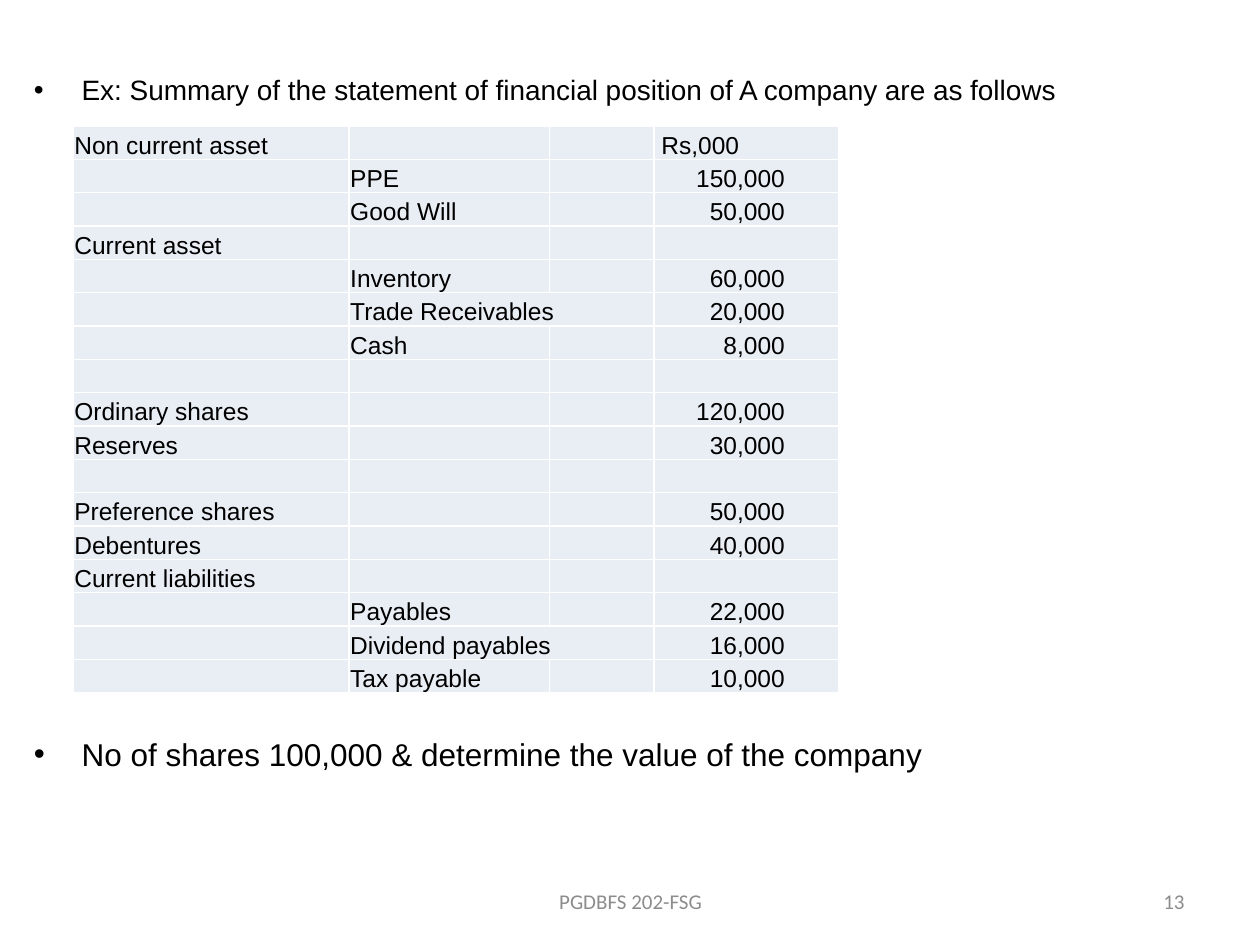
from lxml import etree
from pptx import Presentation
from pptx.dml.color import RGBColor
from pptx.enum.text import MSO_ANCHOR, PP_ALIGN
from pptx.oxml.ns import qn
from pptx.util import Inches, Pt

LEFT, CENTER, RIGHT = PP_ALIGN.LEFT, PP_ALIGN.CENTER, PP_ALIGN.RIGHT
TOP, MIDDLE, BOTTOM = MSO_ANCHOR.TOP, MSO_ANCHOR.MIDDLE, MSO_ANCHOR.BOTTOM

BLACK, GREY, WHITE, PALE_BLUE = "000000", "8C8C8C", "FFFFFF", "E9EDF4"
BODY_FORMAT = {"name": "Arial", "size": Pt(14)}
FOOTER_FORMAT = {"name": "Calibri", "size": Pt(12)}

COLUMN_WIDTHS = (2.19, 1.59, 0.83, 1.47)
ROW_HEIGHT = 4.5 / 17
POSITION_ROWS = (
    ("Non current asset", "", "Rs,000"),
    ("", "PPE", "150,000"),
    ("", "Good Will", "50,000"),
    ("Current asset", "", ""),
    ("", "Inventory", "60,000"),
    ("", "Trade Receivables", "20,000"),
    ("", "Cash", "8,000"),
    ("", "", ""),
    ("Ordinary shares", "", "120,000"),
    ("Reserves", "", "30,000"),
    ("", "", ""),
    ("Preference shares", "", "50,000"),
    ("Debentures", "", "40,000"),
    ("Current liabilities", "", ""),
    ("", "Payables", "22,000"),
    ("", "Dividend payables", "16,000"),
    ("", "Tax payable", "10,000"),
)
WIDE_ITEMS = ("Trade Receivables", "Dividend payables")


def rgb(value):
    return RGBColor.from_string(value)


def apply_format(target, values):
    for attribute, value in values.items():
        setattr(target, attribute, value)


def write(paragraph, text, font_format, color, align=LEFT):
    paragraph.alignment = align
    run = paragraph.add_run()
    run.text = text
    apply_format(run.font, font_format)
    run.font.color.rgb = rgb(color)


def add_text_frame(slide, left, top, width, height, anchor):
    box = slide.shapes.add_textbox(
        Inches(left), Inches(top), Inches(width), Inches(height))
    frame = box.text_frame
    apply_format(frame, {"word_wrap": True, "vertical_anchor": anchor})
    return frame


def add_bullet(paragraph, indent):
    properties = paragraph._p.get_or_add_pPr()
    properties.set("marL", str(Inches(indent)))
    properties.set("indent", str(-Inches(indent)))
    etree.SubElement(properties, qn("a:buFont"), typeface="Arial")
    etree.SubElement(properties, qn("a:buChar"), char="•")


def add_exercise(slide):
    frame = add_text_frame(slide, 0.17, 0.17, 9.33, 6.53, TOP)
    frame.margin_top = Inches(0.41)
    statement = frame.paragraphs[0]
    question = frame.add_paragraph()
    question.space_before = Pt(359)
    lines = (
        (statement, "Ex: Summary of the statement of financial position of A company are as follows", 16),
        (question, "No of shares 100,000 & determine the value of the company", 18),
    )
    for paragraph, text, size in lines:
        write(paragraph, text, {**BODY_FORMAT, "size": Pt(size)}, BLACK)
        add_bullet(paragraph, 0.38)


def add_borders(cell, color, width):
    properties = cell._tc.get_or_add_tcPr()
    for position, side in enumerate(("a:lnL", "a:lnR", "a:lnT", "a:lnB")):
        line = etree.Element(qn(side), w=str(Pt(width)))
        fill = etree.SubElement(line, qn("a:solidFill"))
        etree.SubElement(fill, qn("a:srgbClr"), val=color)
        properties.insert(position, line)


def fill_cell(cell, text, align, left_margin, right_margin):
    apply_format(cell, {
        "margin_left": Inches(left_margin),
        "margin_right": Inches(right_margin),
        "margin_top": Inches(0.01),
        "margin_bottom": 0,
        "vertical_anchor": BOTTOM,
    })
    cell.fill.solid()
    cell.fill.fore_color.rgb = rgb(PALE_BLUE)
    add_borders(cell, WHITE, 1)
    paragraph = cell.text_frame.paragraphs[0]
    if text:
        write(paragraph, text, BODY_FORMAT, BLACK, align)
    else:
        end_format = etree.SubElement(paragraph._p, qn("a:endParaRPr"))
        end_format.set("sz", "1400")


def add_position_table(slide):
    table = slide.shapes.add_table(
        len(POSITION_ROWS), len(COLUMN_WIDTHS), Inches(0.58), Inches(1),
        Inches(sum(COLUMN_WIDTHS)), Inches(4.5)).table
    apply_format(table, {"first_row": False, "horz_banding": False})
    for column, width in zip(table.columns, COLUMN_WIDTHS):
        column.width = Inches(width)
    for index, (group, item, amount) in enumerate(POSITION_ROWS):
        table.rows[index].height = Inches(ROW_HEIGHT)
        for column, text in enumerate((group, item, "")):
            fill_cell(table.cell(index, column), text, LEFT, 0.01, 0.01)
        amount_layout = (LEFT, 0.06, 0.01) if index == 0 else (RIGHT, 0.01, 0.43)
        fill_cell(table.cell(index, 3), amount, *amount_layout)
        if item in WIDE_ITEMS:
            table.cell(index, 1).merge(table.cell(index, 2))


def add_footer(slide, text, left, width, align):
    frame = add_text_frame(slide, left, 6.95, width, 0.4, MIDDLE)
    write(frame.paragraphs[0], text, FOOTER_FORMAT, GREY, align)


def main():
    presentation = Presentation()
    presentation.slide_width = Inches(10)
    presentation.slide_height = Inches(7.5)
    slide = presentation.slides.add_slide(presentation.slide_layouts[6])
    add_exercise(slide)
    add_position_table(slide)
    add_footer(slide, "PGDBFS 202-FSG", 3.42, 3.17, CENTER)
    add_footer(slide, "13", 7.17, 2.33, RIGHT)
    presentation.save("out.pptx")


if __name__ == "__main__":
    main()
